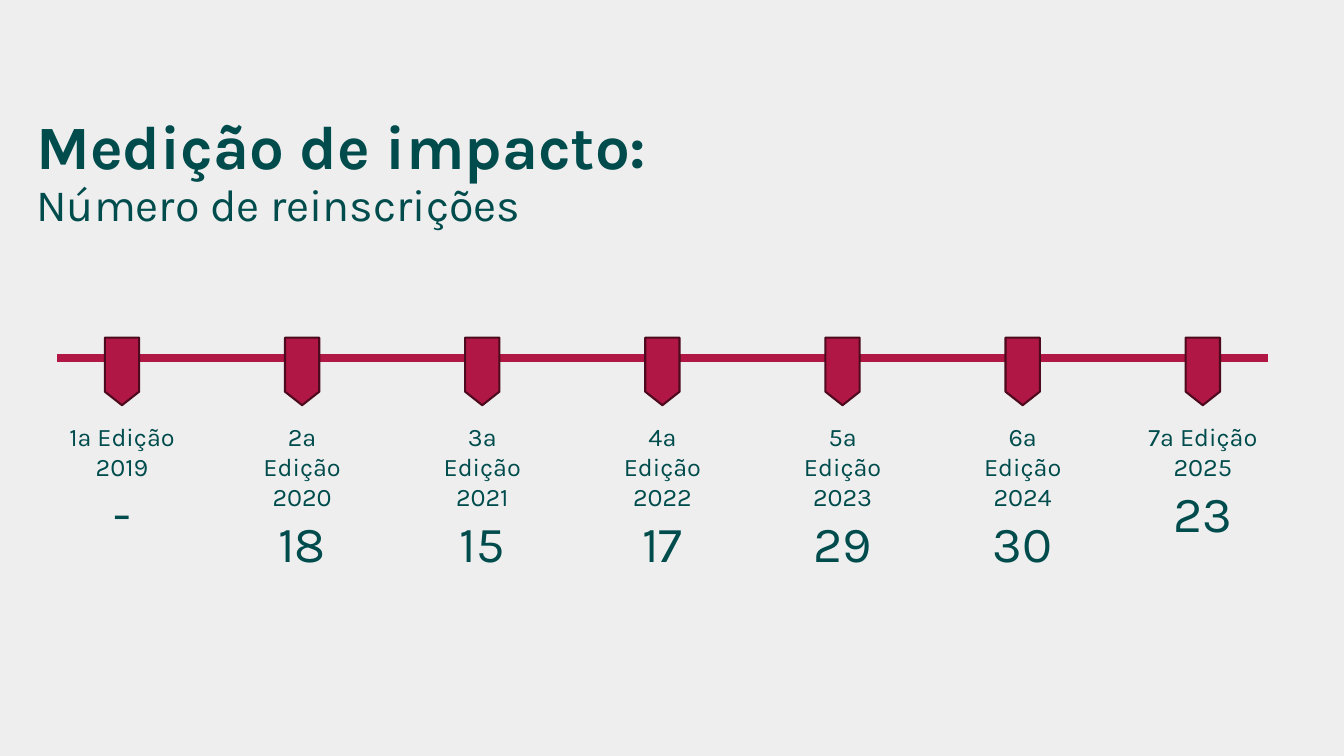
from lxml.etree import SubElement
from pptx import Presentation
from pptx.dml.color import RGBColor
from pptx.enum.shapes import MSO_CONNECTOR, MSO_SHAPE
from pptx.enum.text import MSO_ANCHOR, MSO_AUTO_SIZE, PP_ALIGN
from pptx.oxml.ns import qn
from pptx.util import Inches, Pt

BACKGROUND = RGBColor(0xEE, 0xEE, 0xEE)
GREEN = RGBColor(0x00, 0x4C, 0x4D)
CRIMSON = RGBColor(0xB0, 0x17, 0x44)
DARK_CRIMSON = RGBColor(0x4D, 0x0A, 0x1E)
FONT = "Karla"

REENROLMENTS = ["-", "18", "15", "17", "29", "30", "23"]
FIRST_YEAR = 2019
FIRST_CENTER, LAST_CENTER = 1.21, 11.93
PITCH = (LAST_CENTER - FIRST_CENTER) / (len(REENROLMENTS) - 1)
LABEL_WIDTH, LABEL_TOP, LABEL_HEIGHT = 1.29, 4.13, 1.31
MARKER_WIDTH, MARKER_TOP, MARKER_HEIGHT = 0.34, 3.35, 0.67
AXIS_Y = 3.55


def format_font(font, size, bold=False):
    font.name = FONT
    font.size = Pt(size)
    font.bold = bold
    font.color.rgb = GREEN


def set_title(s, heading, subtitle):
    title = s.shapes.title
    title.left, title.top = Inches(0.26), Inches(1)
    title.width, title.height = Inches(11.5), Inches(1.45)
    tf = title.text_frame
    tf.text = f"{heading}\v{subtitle}"
    tf.word_wrap = True
    tf.auto_size = MSO_AUTO_SIZE.NONE
    tf.vertical_anchor = MSO_ANCHOR.MIDDLE
    p = tf.paragraphs[0]
    p.alignment = PP_ALIGN.LEFT
    p.line_spacing = 0.9
    format_font(p.runs[0].font, 44, True)
    format_font(p.runs[1].font, 32)


def add_axis(s):
    half = LABEL_WIDTH / 2
    axis = s.shapes.add_connector(
        MSO_CONNECTOR.STRAIGHT,
        Inches(FIRST_CENTER - half), Inches(AXIS_Y),
        Inches(LAST_CENTER + half), Inches(AXIS_Y))
    axis.line.color.rgb = CRIMSON
    axis.line.width = Pt(6)
    SubElement(axis._element.spPr, qn("a:effectLst"))


def add_marker(s, center):
    marker = s.shapes.add_shape(
        MSO_SHAPE.FLOWCHART_OFFPAGE_CONNECTOR,
        Inches(center - MARKER_WIDTH / 2), Inches(MARKER_TOP),
        Inches(MARKER_WIDTH), Inches(MARKER_HEIGHT))
    marker.shadow.inherit = False
    marker.fill.solid()
    marker.fill.fore_color.rgb = CRIMSON
    marker.line.color.rgb = DARK_CRIMSON
    marker.line.width = Pt(1.5)


def add_label(s, center, edition, year, count):
    label = s.shapes.add_textbox(
        Inches(center - LABEL_WIDTH / 2), Inches(LABEL_TOP),
        Inches(LABEL_WIDTH), Inches(LABEL_HEIGHT))
    tf = label.text_frame
    tf.word_wrap = True
    tf.auto_size = MSO_AUTO_SIZE.SHAPE_TO_FIT_TEXT
    tf.text = f"{edition}ª Edição\n{year}\n{count}"
    for p, size in zip(tf.paragraphs, (18, 18, 36)):
        p.alignment = PP_ALIGN.CENTER
        format_font(p.runs[0].font, size)


def main():
    prs = Presentation()
    prs.slide_width, prs.slide_height = Inches(13.33), Inches(7.5)
    s = prs.slides.add_slide(prs.slide_layouts.get_by_name("Title Only"))
    s.background.fill.solid()
    s.background.fill.fore_color.rgb = BACKGROUND

    set_title(s, "Medição de impacto:", "Número de reinscrições")
    add_axis(s)
    for i, count in enumerate(REENROLMENTS):
        center = FIRST_CENTER + i * PITCH
        add_marker(s, center)
        add_label(s, center, i + 1, FIRST_YEAR + i, count)

    prs.save("out.pptx")


if __name__ == "__main__":
    main()
